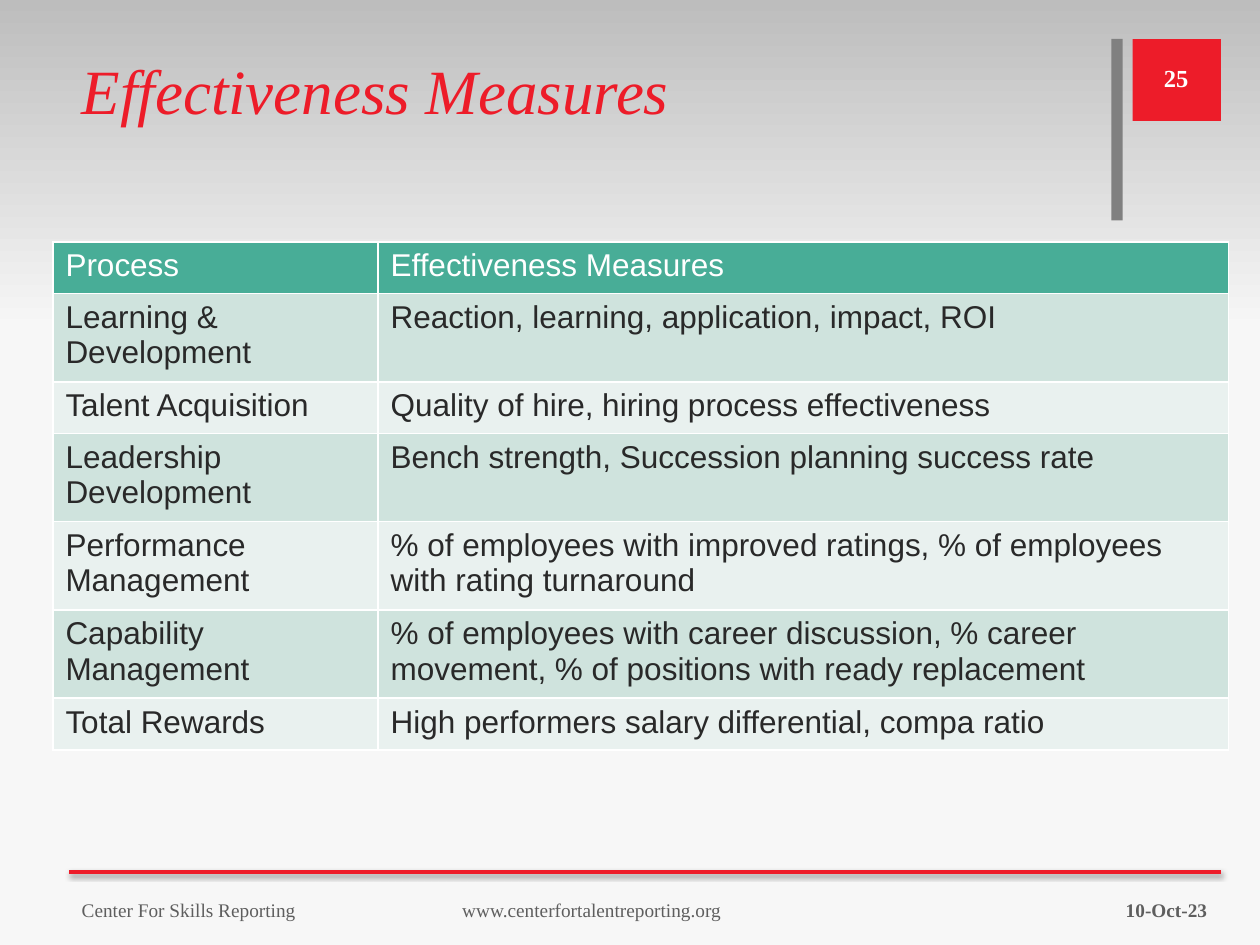
from dataclasses import dataclass

from lxml.etree import SubElement
from pptx import Presentation
from pptx.dml.color import RGBColor
from pptx.enum.shapes import MSO_CONNECTOR as Connector, MSO_SHAPE as Shape
from pptx.enum.text import MSO_ANCHOR as Anchor, PP_ALIGN as Align
from pptx.oxml.ns import qn
from pptx.util import Inches, Pt

COLORS = {
    "red": "ED1C29", "gray": "808080", "footer": "5E5E5E", "white": "FFFFFF",
    "dark": "292929", "header": "48AD97", "band": "CFE3DD", "light": "E9F1EF",
    "sky": "BDBDBD", "ground": "F7F7F7", "black": "000000",
}
SERIF, SANS = "Times New Roman", "Arial"


@dataclass
class Block:
    left: float
    top: float
    width: float
    height: float
    color: str


@dataclass
class Label:
    text: str
    left: float
    top: float
    width: float
    size: float
    color: str
    align: Align = Align.LEFT
    bold: bool = False
    tab: float = 0


BLOCKS = [
    Block(8.99, 0.31, 0.7, 0.65, "red"),
    Block(8.82, 0.31, 0.09, 1.44, "gray"),
]
LABELS = [
    Label("10-Oct-23", 7.35, 7.02, 2.33, 11, "footer", Align.RIGHT, True),
    Label("Center For Skills Reporting\twww.centerfortalentreporting.org",
          0.55, 7.02, 6.62, 11, "footer", tab=3.02),
    Label("25", 9, 0.42, 0.67, 14, "white", Align.CENTER, True),
]
COLUMN_WIDTHS = [2.58, 6.75]
LINE_HEIGHT, ROW_PADDING = 0.25, 0.16
# Process, measures, number of text lines
ROWS = [
    ("Process", "Effectiveness Measures", 1),
    ("Learning & Development", "Reaction, learning, application, impact, ROI", 2),
    ("Talent Acquisition", "Quality of hire, hiring process effectiveness", 1),
    ("Leadership Development", "Bench strength, Succession planning success rate", 2),
    ("Performance Management",
     "% of employees with improved ratings, % of employees with rating turnaround", 2),
    ("Capability Management",
     "% of employees with career discussion, % career movement, "
     "% of positions with ready replacement", 2),
    ("Total Rewards", "High performers salary differential, compa ratio", 1),
]


def rgb(name: str) -> RGBColor:
    return RGBColor.from_string(COLORS[name])


def add_span(para, text: str, font: str, size: float, color: str,
             bold: bool = False, italic: bool = False) -> None:
    span = para.add_run()
    span.text = text
    span.font.name, span.font.size = font, Pt(size)
    span.font.bold, span.font.italic = bold, italic
    span.font.color.rgb = rgb(color)


def paint_background(page) -> None:
    fill = page.background.fill
    fill.gradient()
    fill.gradient_angle = 270
    for stop, color, position in zip(fill.gradient_stops, ("sky", "ground"), (0, 0.35)):
        stop.color.rgb = rgb(color)
        stop.position = position


def add_block(page, block: Block) -> None:
    shape = page.shapes.add_shape(Shape.RECTANGLE, Inches(block.left), Inches(block.top),
                                  Inches(block.width), Inches(block.height))
    shape.shadow.inherit = False
    shape.fill.solid()
    shape.fill.fore_color.rgb = rgb(block.color)
    shape.line.fill.background()


def add_footer_rule(page) -> None:
    rule = page.shapes.add_connector(Connector.STRAIGHT, Inches(0.55), Inches(6.92),
                                     Inches(9.69), Inches(6.92))
    rule.line.color.rgb = rgb("red")
    rule.line.width = Pt(2)
    effects = SubElement(rule._element.spPr, qn("a:effectLst"))
    shadow = SubElement(effects, qn("a:outerShdw"), blurRad=str(Pt(3.1)),
                        dist=str(Pt(1.6)), dir="5400000", rotWithShape="0")
    color = SubElement(shadow, qn("a:srgbClr"), val=COLORS["black"])
    SubElement(color, qn("a:alpha"), val="38000")


def add_label(page, label: Label) -> None:
    box = page.shapes.add_textbox(Inches(label.left), Inches(label.top),
                                  Inches(label.width), Inches(0.4))
    frame = box.text_frame
    frame.word_wrap = True
    frame.vertical_anchor = Anchor.MIDDLE
    para = frame.paragraphs[0]
    para.alignment = label.align
    if label.tab:
        tabs = SubElement(para._p.get_or_add_pPr(), qn("a:tabLst"))
        SubElement(tabs, qn("a:tab"), pos=str(Inches(label.tab)), algn="l")
    add_span(para, label.text, SERIF, label.size, label.color, label.bold)


def set_title(page, text: str) -> None:
    title = page.shapes.title
    title.left, title.top = Inches(0.55), Inches(0.31)
    title.width, title.height = Inches(8.26), Inches(1.44)
    frame = title.text_frame
    frame.vertical_anchor = Anchor.TOP
    frame.margin_top = Inches(0.1)
    para = frame.paragraphs[0]
    para.alignment = Align.LEFT
    add_span(para, text, SERIF, 36, "red", italic=True)


def style_cell(cell, fill: str) -> None:
    """Give the cell white one-point borders and a plain fill."""
    properties = cell._tc.get_or_add_tcPr()
    for side in ("lnL", "lnR", "lnT", "lnB"):
        border = SubElement(properties, qn(f"a:{side}"), w=str(Pt(1)))
        solid = SubElement(border, qn("a:solidFill"))
        SubElement(solid, qn("a:srgbClr"), val=COLORS["white"])
    cell.fill.solid()
    cell.fill.fore_color.rgb = rgb(fill)


def add_measures_table(page) -> None:
    heights = [ROW_PADDING + LINE_HEIGHT * lines for *_, lines in ROWS]
    table = page.shapes.add_table(len(ROWS), len(COLUMN_WIDTHS), Inches(0.42), Inches(1.92),
                                  Inches(sum(COLUMN_WIDTHS)), Inches(sum(heights))).table
    for column, width in zip(table.columns, COLUMN_WIDTHS):
        column.width = Inches(width)
    for index, (*texts, _) in enumerate(ROWS):
        table.rows[index].height = Inches(heights[index])
        fill = "header" if index == 0 else ("light", "band")[index % 2]
        color = "white" if index == 0 else "dark"
        for cell, text in zip(table.rows[index].cells, texts):
            style_cell(cell, fill)
            add_span(cell.text_frame.paragraphs[0], text, SANS, 18, color)


def main() -> None:
    deck = Presentation()
    deck.slide_width, deck.slide_height = Inches(10), Inches(7.5)
    page = deck.slides.add_slide(deck.slide_layouts[5])
    paint_background(page)
    for block in BLOCKS:
        add_block(page, block)
    add_footer_rule(page)
    set_title(page, "Effectiveness Measures")
    for label in LABELS:
        add_label(page, label)
    add_measures_table(page)
    deck.save("out.pptx")


if __name__ == "__main__":
    main()
